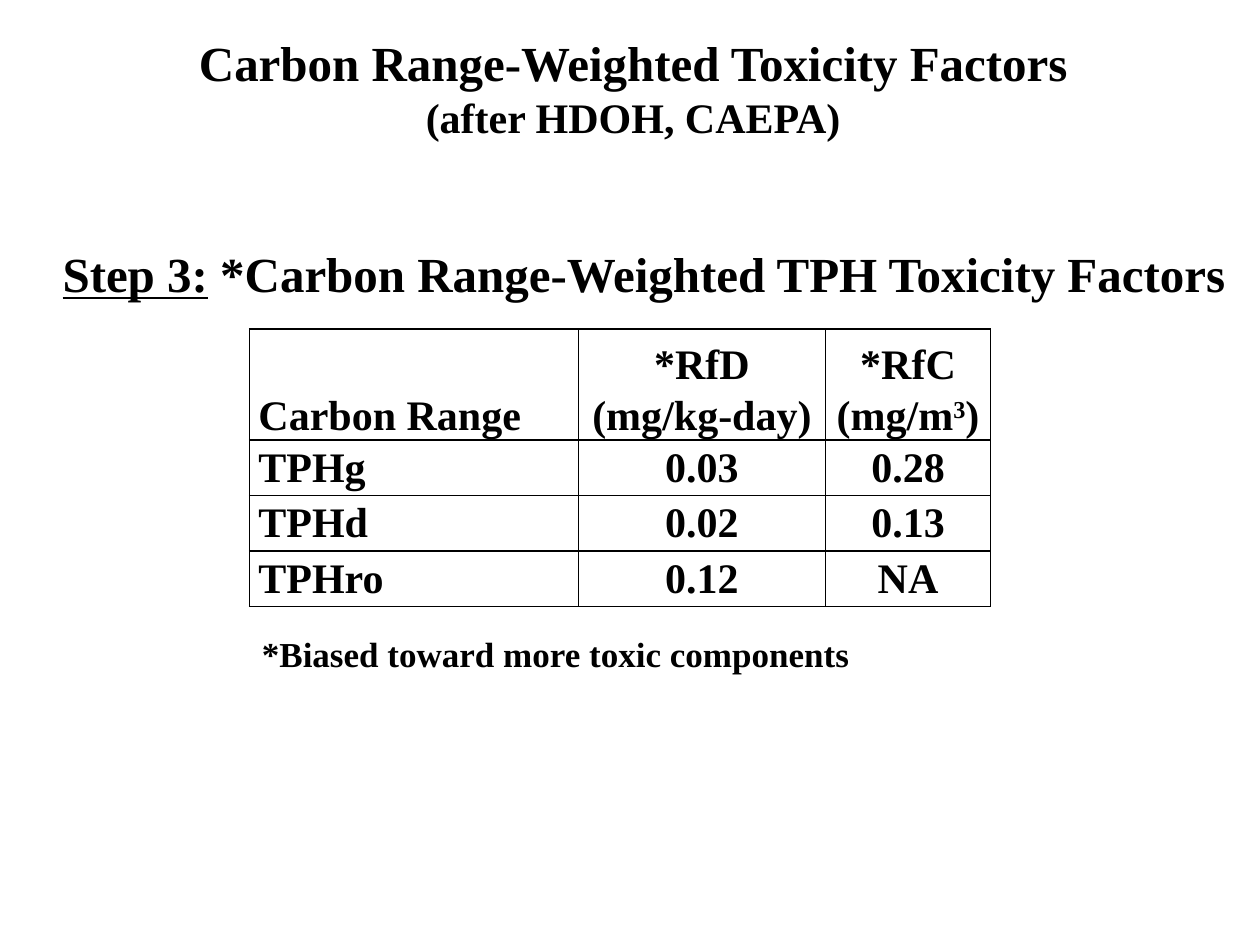
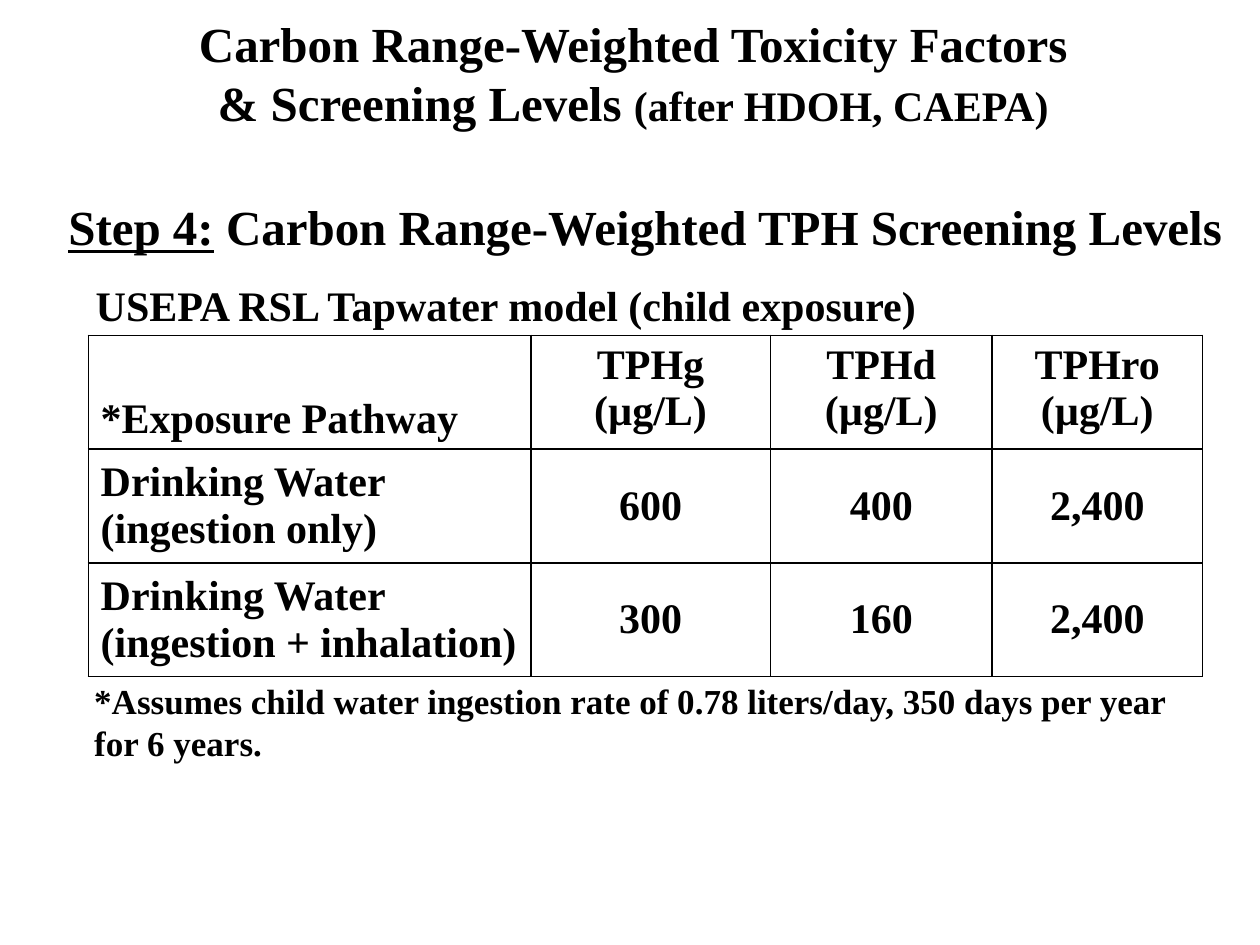
from lxml.etree import SubElement
from pptx import Presentation
from pptx.dml.color import RGBColor
from pptx.enum.text import MSO_ANCHOR as Anchor, MSO_AUTO_SIZE as Fit, PP_ALIGN as Align
from pptx.oxml.ns import qn
from pptx.util import Cm, Pt

FONT = "Times New Roman"
BLACK = RGBColor(0, 0, 0)
BIG, MID, SMALL = 28, 24, 20
TITLE = "Carbon Range-Weighted Toxicity Factors"
SOURCE = ("(after HDOH, CAEPA)", MID)
UNIT = "(µg/L)"

# A line is a list of runs; a run is plain text or (text, size or mark).
SLIDES = [
    {
        "title": [[TITLE], [SOURCE]],
        "title_box": (3.66, 0.53, 18.21, 2.49),
        "step": [("Step 3:", "under"), " *Carbon Range-Weighted TPH Toxicity Factors"],
        "step_box": (0.89, 4.78, 24.18, 1.45),
        "labels": [
            ("*Biased toward more toxic components", SMALL, (5.03, 12.62, 14.94, 1.12)),
        ],
        "table": {
            "at": (5.03, 6.63),
            "cols": [6.63, 4.98, 3.33],
            "rows": [2.24, 1.12, 1.12, 1.12],
            "insets": (0.18, 0),
            "spacing": 1.1,
            "head": Anchor.BOTTOM,
            "body": Anchor.TOP,
            "cells": [
                [[["Carbon Range"]], [["*RfD"], ["(mg/kg-day)"]],
                 [["*RfC"], ["(mg/m", ("3", "super"), ")"]]],
                ["TPHg", "0.03", "0.28"],
                ["TPHd", "0.02", "0.13"],
                ["TPHro", "0.12", "NA"],
            ],
        },
    },
    {
        "title": [[TITLE], ["& Screening Levels ", SOURCE]],
        "title_box": (3.66, 0.15, 18.21, 2.64),
        "step": [("Step 4:", "under"), " Carbon Range-Weighted TPH Screening Levels"],
        "step_box": (0.79, 3.84, 24.43, 1.45),
        "labels": [
            ("*Assumes child water ingestion rate of 0.78 liters/day, 350 days per year "
             "for 6 years.", SMALL, (1.65, 13.56, 22.58, 1.96)),
            ("USEPA RSL Tapwater model (child exposure)", MID, (1.68, 5.51, 17.09, 1.27)),
        ],
        "table": {
            "at": (1.78, 6.76),
            "cols": [8.92, 4.83, 4.47, 4.24],
            "rows": [2.29] * 3,
            "insets": (0.25, 0.13),
            "spacing": None,
            "head": Anchor.TOP,
            "body": Anchor.MIDDLE,
            "cells": [
                ["*Exposure Pathway"] + [[[name], [UNIT]] for name in ("TPHg", "TPHd", "TPHro")],
                ["Drinking Water (ingestion only)", "600", "400", "2,400"],
                ["Drinking Water (ingestion + inhalation)", "300", "160", "2,400"],
            ],
        },
    },
]


def write(frame, lines, size, align, spacing=None):
    for i, line in enumerate(lines):
        para = frame.paragraphs[0] if i == 0 else frame.add_paragraph()
        para.alignment = align
        if spacing:
            para.line_spacing = spacing
        for part in line:
            text, mark = part if isinstance(part, tuple) else (part, size)
            run = para.add_run()
            run.text = text
            font = run.font
            font.name, font.bold = FONT, True
            font.size = Pt(mark if isinstance(mark, int) else size)
            font.color.rgb = BLACK
            if mark == "under":
                font.underline = True
            elif mark == "super":
                font._element.set("baseline", "30000")


def add_text(slide, box, lines, size, align=Align.LEFT, anchor=Anchor.MIDDLE, wrap=True):
    frame = slide.shapes.add_textbox(*map(Cm, box)).text_frame
    frame.word_wrap = wrap
    frame.auto_size = Fit.SHAPE_TO_FIT_TEXT
    frame.vertical_anchor = anchor
    write(frame, lines, size, align)


def rule(cell):
    """Draw a one-point line on each side of the cell and leave it unfilled."""
    props = cell._tc.get_or_add_tcPr()
    for side in ("lnL", "lnR", "lnT", "lnB"):
        line = SubElement(props, qn("a:" + side), w=str(Pt(1)))
        fill = SubElement(line, qn("a:solidFill"))
        SubElement(fill, qn("a:srgbClr"), val=str(BLACK))
    cell.fill.background()


def add_grid(slide, data):
    cols, rows, cells = data["cols"], data["rows"], data["cells"]
    grid = slide.shapes.add_table(len(rows), len(cols), *map(Cm, data["at"]),
                                  Cm(sum(cols)), Cm(sum(rows))).table
    grid.first_row = grid.horz_banding = False
    for col, width in zip(grid.columns, cols):
        col.width = Cm(width)
    for row, height in zip(grid.rows, rows):
        row.height = Cm(height)
    side, top = map(Cm, data["insets"])
    for r, row in enumerate(cells):
        for c, lines in enumerate(row):
            cell = grid.cell(r, c)
            cell.margin_left = cell.margin_right = side
            cell.margin_top = cell.margin_bottom = top
            if r:
                cell.vertical_anchor = data["body"]
            else:
                cell.vertical_anchor = data["head"] if c else Anchor.BOTTOM
            if isinstance(lines, str):
                lines = [[lines]]
            write(cell.text_frame, lines, MID, Align.CENTER if c else Align.LEFT,
                  data["spacing"])
            rule(cell)


def main():
    deck = Presentation()
    deck.slide_width, deck.slide_height = Cm(25.4), Cm(19.05)
    for data in SLIDES:
        slide = deck.slides.add_slide(deck.slide_layouts[6])
        add_text(slide, data["title_box"], data["title"], BIG, Align.CENTER, Anchor.TOP, False)
        add_text(slide, data["step_box"], [data["step"]], BIG, Align.CENTER)
        add_grid(slide, data["table"])
        for text, size, box in data["labels"]:
            add_text(slide, box, [[text]], size)
    deck.save("out.pptx")


if __name__ == "__main__":
    main()
